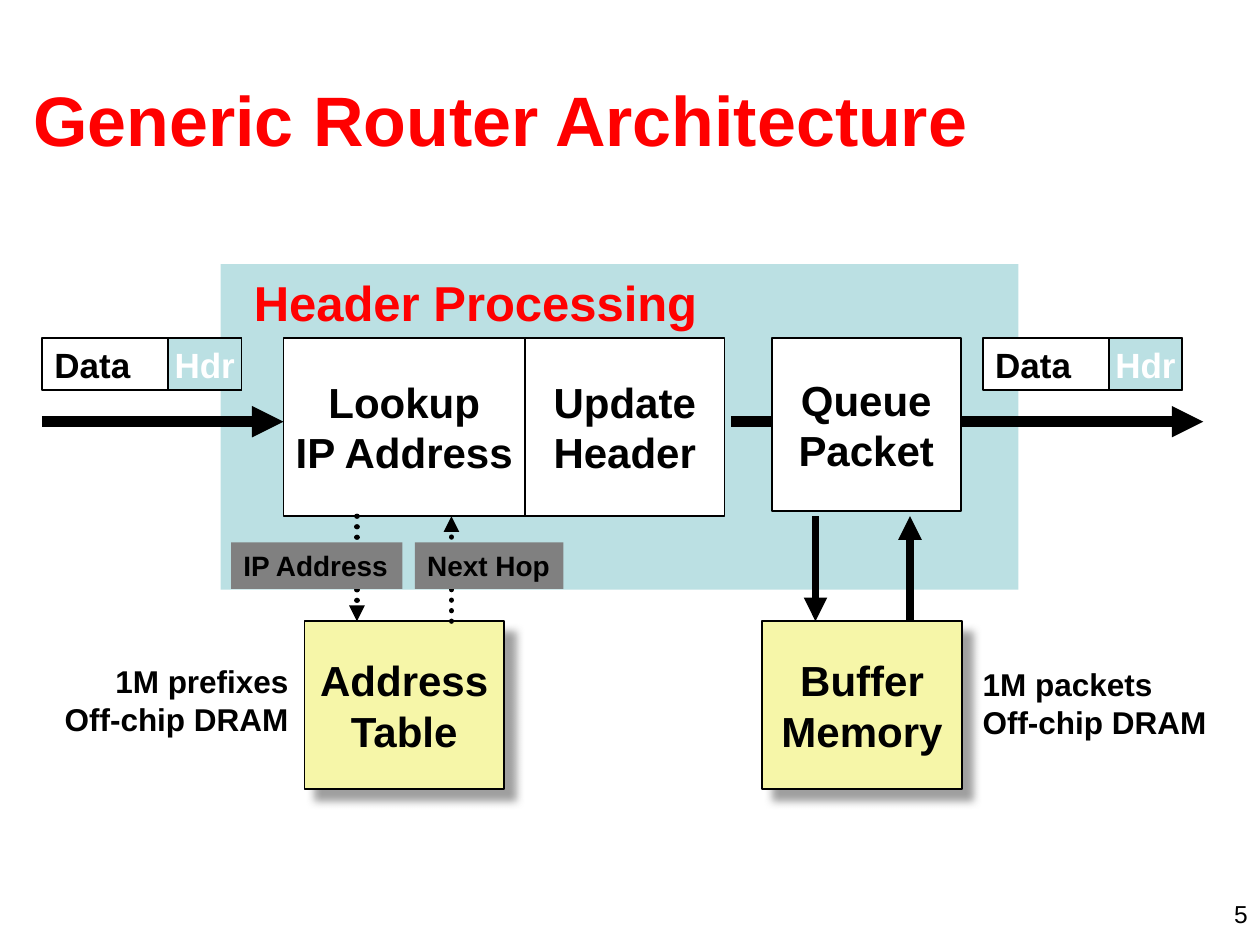
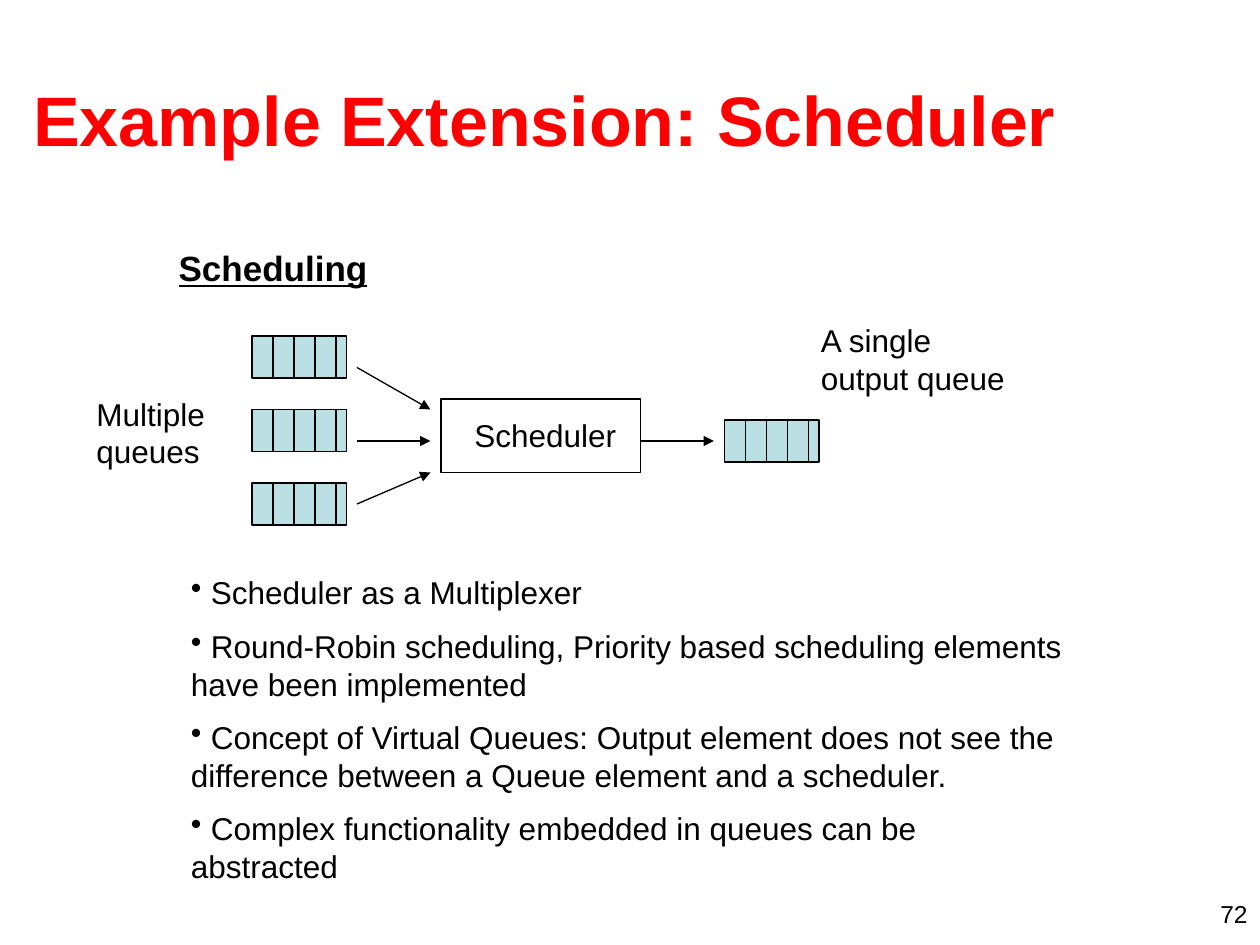
from lxml import etree
from pptx import Presentation
from pptx.dml.color import RGBColor
from pptx.enum.dml import MSO_LINE
from pptx.enum.shapes import MSO_CONNECTOR, MSO_SHAPE
from pptx.enum.text import MSO_ANCHOR, PP_ALIGN
from pptx.oxml.ns import qn
from pptx.util import Pt

RECTANGLE = MSO_SHAPE.RECTANGLE
STRAIGHT = MSO_CONNECTOR.STRAIGHT
DOTTED = MSO_LINE.ROUND_DOT
TOP, MIDDLE = MSO_ANCHOR.TOP, MSO_ANCHOR.MIDDLE
LEFT, CENTER, RIGHT = PP_ALIGN.LEFT, PP_ALIGN.CENTER, PP_ALIGN.RIGHT

FONT = "Arial"
BLACK, WHITE, RED = "000000", "FFFFFF", "FF0000"
PALE_BLUE, YELLOW, GRAY = "BBE0E3", "F6F6A8", "808080"

TITLE_AREA = (12, 23, 690, 90)
NUMBER_AREA = (552, 510, 168, 18)
TITLE_FORMAT = {"size": Pt(40), "bold": True}
NUMBER_FORMAT = {"size": Pt(14)}
STAGE_FORMAT = {"size": Pt(24), "bold": True}
PACKET_FORMAT = {"size": Pt(20), "bold": True}
SIGNAL_FORMAT = {"size": Pt(16), "bold": True}
NOTE_FORMAT = {"size": Pt(18), "bold": True}
BAND_FORMAT = {"size": Pt(28), "bold": True}
HEADING_FORMAT = {"size": Pt(20), "bold": True, "underline": True}
BODY_FORMAT = {"size": Pt(18)}

# Router slide: areas are left, top, width, height
PROCESSING_BAND = (126, 151, 456, 186)
PROCESSING_LABEL = ("Header Processing", (138, 152, 269, 41))
HEADER_STAGES = [
    ("Lookup\nIP Address", (162, 193, 138, 102)),
    ("Update\nHeader", (300, 193, 114, 102)),
]
QUEUE_STAGE = ("Queue\nPacket", (441, 193, 108, 99))
MEMORIES = [
    ("Address\nTable", (174, 355, 114, 96)),
    ("Buffer\nMemory", (435.6, 355, 114, 96)),
]
MEMORY_NOTES = [
    ("1M prefixes\nOff-chip DRAM", (29.5, 375, 142.5, 50), RIGHT),
    ("1M packets\nOff-chip DRAM", (554.4, 376.5, 142.5, 50), LEFT),
]
PACKET_LEFTS = [24, 561.6]
PACKET_TOP, PACKET_WIDTH, PACKET_HEIGHT, HEADER_WIDTH = 193, 114, 30, 42
DATA_PATHS = [((24, 241), (162, 241)), ((417.6, 241), (687.6, 241))]
STAGE_BOTTOM, MEMORY_TOP = 295, 355
BUFFER_WRITE_X, BUFFER_READ_X = 466, 520
SIGNALS = [
    ("IP Address", (132, 310, 98, 26.6), 204, STAGE_BOTTOM, MEMORY_TOP),
    ("Next Hop", (237, 310, 85, 26.6), 258, MEMORY_TOP, STAGE_BOTTOM),
]

# Scheduler slide
QUEUE_WIDTH, QUEUE_HEIGHT, SLOT_WIDTH = 54, 24, 12
INPUT_LEFT, INPUT_TOP, INPUT_STEP, INPUT_COUNT = 144, 192, 42, 3
OUTPUT_QUEUE = (414, 240)
SCHEDULER_BOX = (252, 228, 114, 42)
SCHEDULER_ARROWS = [
    ((204, 210), (246, 234)),
    ((204, 252), (246, 252)),
    ((204, 288), (246, 270)),
    ((366, 252), (408, 252)),
]
SCHEDULER_TEXTS = [
    ("Scheduling", (95, 137.5, 181, 31), HEADING_FORMAT),
    ("Scheduler", (264, 234, 96, 29), BODY_FORMAT),
    ("Multiple queues", (48, 222, 84, 50), BODY_FORMAT),
    ("A single output queue", (462, 180, 126, 50), BODY_FORMAT),
]
BULLET_AREA = (102, 324, 516, 191.5)
BULLETS = [
    "Scheduler as a Multiplexer",
    "Round-Robin scheduling, Priority based scheduling elements have been implemented",
    "Concept of Virtual Queues: Output element does not see the difference "
    "between a Queue element and a scheduler.",
    "Complex functionality embedded in queues can be abstracted",
]


def color(value):
    return RGBColor.from_string(value)


def points(values):
    return [Pt(value) for value in values]


def write(shape, text, font_format, ink=BLACK, align=LEFT, anchor=TOP, wrap=True):
    """Put text in a shape, one paragraph per line."""
    frame = shape.text_frame
    frame.text = text
    frame.word_wrap = wrap
    frame.vertical_anchor = anchor
    for paragraph in frame.paragraphs:
        paragraph.alignment = align
        font = paragraph.runs[0].font
        font.name = FONT
        font.color.rgb = color(ink)
        for name, value in font_format.items():
            setattr(font, name, value)


def add_text(slide, text, area, font_format, **options):
    shape = slide.shapes.add_textbox(*points(area))
    write(shape, text, font_format, **options)
    return shape


def add_box(slide, area, fill, line_width=0):
    shape = slide.shapes.add_shape(RECTANGLE, *points(area))
    shape.shadow.inherit = False
    shape.fill.solid()
    shape.fill.fore_color.rgb = color(fill)
    if line_width:
        shape.line.color.rgb = color(BLACK)
        shape.line.width = Pt(line_width)
    else:
        shape.line.fill.background()
    return shape


def add_stage(slide, text, area, fill=WHITE):
    shape = add_box(slide, area, fill, 1)
    write(shape, text, STAGE_FORMAT, align=CENTER, anchor=MIDDLE, wrap=False)
    return shape


def add_drop_shadow(shape):
    effects = shape.element.spPr.find(qn("a:effectLst"))
    shadow = etree.SubElement(effects, qn("a:outerShdw"), blurRad=str(Pt(5)),
                              dist=str(Pt(8.5)), dir="2700000", algn="tl", rotWithShape="0")
    shade = etree.SubElement(shadow, qn("a:srgbClr"), val=GRAY)
    etree.SubElement(shade, qn("a:alpha"), val="75000")


def add_line(slide, start, end, width=0.75, arrow=True, dotted=False):
    connector = slide.shapes.add_connector(STRAIGHT, *points(start + end))
    connector.line.color.rgb = color(BLACK)
    connector.line.width = Pt(width)
    properties = connector.element.spPr
    outline = properties.find(qn("a:ln"))
    if dotted:
        connector.line.dash_style = DOTTED
        outline.set("cap", "rnd")
    if arrow:
        etree.SubElement(outline, qn("a:tailEnd"), type="triangle")
    etree.SubElement(properties, qn("a:effectLst"))


def add_packet(slide, left):
    data = add_box(slide, (left, PACKET_TOP, PACKET_WIDTH, PACKET_HEIGHT), WHITE, 1)
    write(data, "Data", PACKET_FORMAT, anchor=MIDDLE)
    header_left = left + PACKET_WIDTH - HEADER_WIDTH
    header = add_box(slide, (header_left, PACKET_TOP, HEADER_WIDTH, PACKET_HEIGHT), PALE_BLUE, 1)
    write(header, "Hdr", PACKET_FORMAT, ink=WHITE, align=CENTER, anchor=MIDDLE, wrap=False)


def add_queue(slide, left, top):
    """Draw a queue divided into slots, the last one cut short."""
    add_box(slide, (left, top, QUEUE_WIDTH, QUEUE_HEIGHT), PALE_BLUE, 0.75)
    for offset in range(SLOT_WIDTH, QUEUE_WIDTH, SLOT_WIDTH):
        x = left + offset
        add_line(slide, (x, top), (x, top + QUEUE_HEIGHT), arrow=False)


def add_bullets(slide):
    text = "\n".join(f" {bullet}" for bullet in BULLETS)
    shape = add_text(slide, text, BULLET_AREA, BODY_FORMAT)
    for index, paragraph in enumerate(shape.text_frame.paragraphs):
        if index:
            paragraph.space_before = Pt(9)
        properties = paragraph._p.get_or_add_pPr()
        properties.set("marL", "0")
        properties.set("indent", "0")
        etree.SubElement(properties, qn("a:buChar"), char="•")


def add_slide(presentation, title, number):
    slide = presentation.slides.add_slide(presentation.slide_layouts[6])
    add_text(slide, title, TITLE_AREA, TITLE_FORMAT, ink=RED, anchor=MIDDLE)
    add_text(slide, number, NUMBER_AREA, NUMBER_FORMAT, align=RIGHT)
    return slide


def build_router(presentation):
    slide = add_slide(presentation, "Generic Router Architecture", "5")
    add_box(slide, PROCESSING_BAND, PALE_BLUE)
    label, area = PROCESSING_LABEL
    add_text(slide, label, area, BAND_FORMAT, ink=RED, wrap=False)
    for text, area in HEADER_STAGES:
        add_stage(slide, text, area)
    for text, area in MEMORIES:
        add_drop_shadow(add_stage(slide, text, area, YELLOW))
    for text, area, align in MEMORY_NOTES:
        add_text(slide, text, area, NOTE_FORMAT, align=align, wrap=False)
    for start, end in DATA_PATHS:
        add_line(slide, start, end, 6)
    add_stage(slide, *QUEUE_STAGE)
    for left in PACKET_LEFTS:
        add_packet(slide, left)
    for text, area, x, start_y, end_y in SIGNALS:
        add_line(slide, (x, start_y), (x, end_y), 3, dotted=True)
        write(add_box(slide, area, GRAY), text, SIGNAL_FORMAT, wrap=False)
    add_line(slide, (BUFFER_WRITE_X, STAGE_BOTTOM), (BUFFER_WRITE_X, MEMORY_TOP), 4.5)
    add_line(slide, (BUFFER_READ_X, MEMORY_TOP), (BUFFER_READ_X, STAGE_BOTTOM), 4.5)


def build_scheduler(presentation):
    slide = add_slide(presentation, "Example Extension: Scheduler", "72")
    for index in range(INPUT_COUNT):
        add_queue(slide, INPUT_LEFT, INPUT_TOP + index * INPUT_STEP)
    add_queue(slide, *OUTPUT_QUEUE)
    add_box(slide, SCHEDULER_BOX, WHITE, 0.75)
    for start, end in SCHEDULER_ARROWS:
        add_line(slide, start, end)
    for text, area, font_format in SCHEDULER_TEXTS:
        add_text(slide, text, area, font_format)
    add_bullets(slide)


def main():
    presentation = Presentation()
    presentation.slide_width, presentation.slide_height = Pt(720), Pt(540)
    build_router(presentation)
    build_scheduler(presentation)
    presentation.save("out.pptx")


if __name__ == "__main__":
    main()
